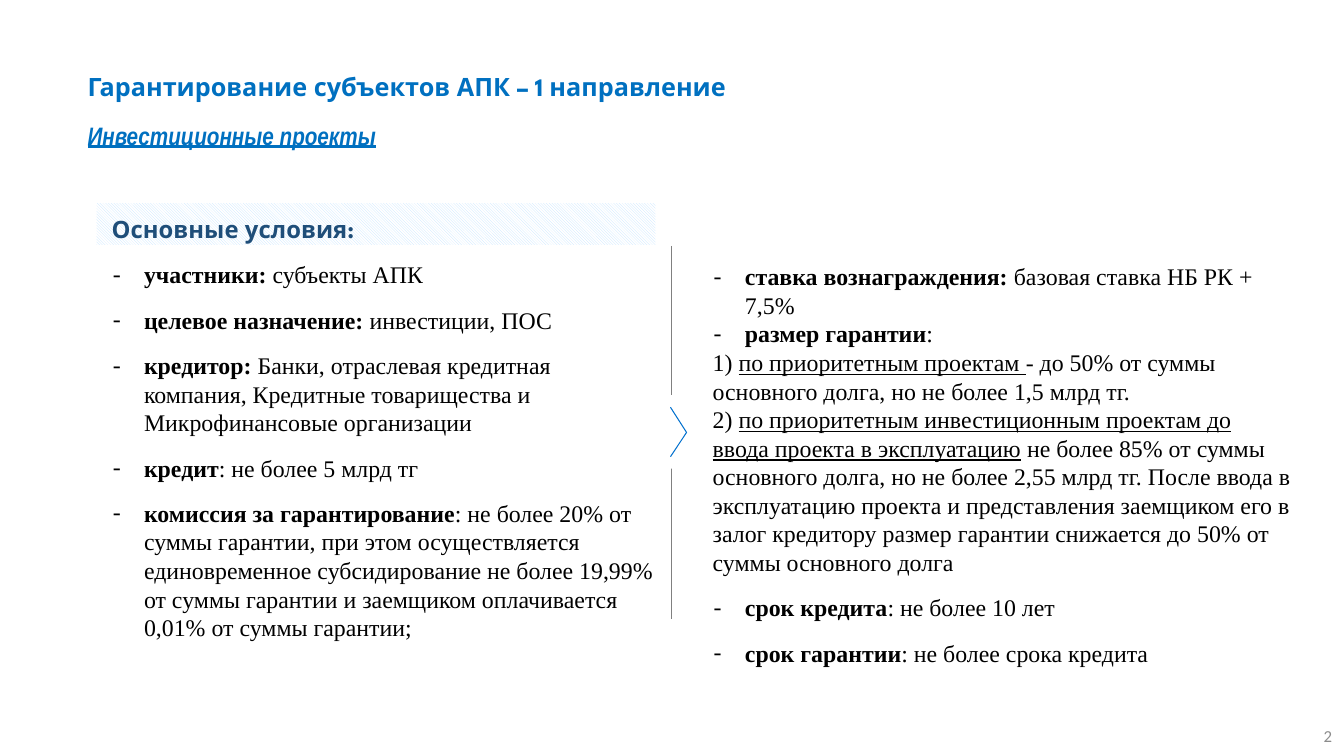
"""Builds the slide on guarantees for agricultural investment projects."""
from lxml.etree import SubElement
from pptx import Presentation
from pptx.dml.color import RGBColor
from pptx.enum.dml import MSO_PATTERN
from pptx.enum.shapes import MSO_CONNECTOR, MSO_SHAPE
from pptx.enum.text import MSO_ANCHOR, PP_ALIGN
from pptx.oxml.ns import qn
from pptx.util import Inches, Pt

BLUE = RGBColor(0x00, 0x70, 0xC0)
CHEVRON_BLUE = RGBColor(0x00, 0x70, 0xCE)
NAVY = RGBColor(0x1F, 0x4E, 0x79)
BLACK = RGBColor(0x00, 0x00, 0x00)
WHITE = RGBColor(0xFF, 0xFF, 0xFF)
PALE_BLUE = RGBColor(0xC2, 0xE3, 0xFF)
LINE_GRAY = RGBColor(0x80, 0x80, 0x80)
NUMBER_GRAY = RGBColor(0x8C, 0x8C, 0x8C)

TITLE = {"name": "League Spartan", "size": Pt(18), "bold": True, "color": BLUE}
SUBTITLE = {"name": "Arial Narrow", "size": Pt(18), "bold": True, "italic": True,
            "underline": True, "color": BLUE}
HEADING = {"name": "League Spartan", "size": Pt(17), "bold": True, "color": NAVY}
BODY = {"name": "Times New Roman", "size": Pt(17), "color": BLACK}
BOLD = {**BODY, "bold": True}
UNDERLINED = {**BODY, "underline": True}
NUMBER = {"name": "Calibri", "size": Pt(12), "color": NUMBER_GRAY}

PLAIN = {}
BULLET = {"bullet": "-"}
SPACED_BULLET = {"bullet": "-", "space_before": Pt(12)}

CONDITIONS = [
    (PLAIN, [("Основные условия:", HEADING)]),
    (SPACED_BULLET, [("участники: ", BOLD), ("субъекты АПК", BODY)]),
    (SPACED_BULLET, [("целевое назначение:", BOLD), (" инвестиции, ПОС", BODY)]),
    (SPACED_BULLET, [("кредитор: ", BOLD),
                     ("Банки, отраслевая кредитная компания, Кредитные товарищества "
                      "и Микрофинансовые организации", BODY)]),
    (SPACED_BULLET, [("кредит", BOLD), (": не более 5 млрд тг", BODY)]),
    (SPACED_BULLET, [("комиссия за гарантирование", BOLD),
                     (": не более 20% от суммы гарантии, при этом осуществляется "
                      "единовременное субсидирование не более 19,99% от суммы гарантии "
                      "и заемщиком оплачивается 0,01% от суммы гарантии;", BODY)]),
]
TERMS = [
    (BULLET, [("ставка вознаграждения: ", BOLD), ("базовая ставка НБ РК + 7,5%", BODY)]),
    (BULLET, [("размер гарантии", BOLD), (":", BODY)]),
    (PLAIN, [("1) ", BODY), ("по приоритетным проектам ", UNDERLINED),
             ("- до 50% от суммы основного долга, но не более 1,5 млрд тг.", BODY)]),
    (PLAIN, [("2) ", BODY),
             ("по приоритетным инвестиционным проектам до ввода проекта в эксплуатацию",
              UNDERLINED),
             (" не более 85% от суммы основного долга, но не более 2,55 млрд тг. После "
              "ввода в эксплуатацию проекта и представления заемщиком его в залог "
              "кредитору размер гарантии снижается до 50% от суммы основного долга", BODY)]),
    (SPACED_BULLET, [("срок кредита", BOLD), (": не более 10 лет", BODY)]),
    (SPACED_BULLET, [("срок гарантии", BOLD), (": не более срока кредита", BODY)]),
]
TEXT_BOXES = [
    ((0.77, 0.66, 8.69, 0.4), MSO_ANCHOR.TOP,
     [({"alignment": PP_ALIGN.JUSTIFY},
       [("Гарантирование субъектов АПК – 1 направление", TITLE)])]),
    ((0.77, 1.03, 8.43, 0.66), MSO_ANCHOR.MIDDLE,
     [({"line_spacing": 0.9}, [("Инвестиционные проекты", SUBTITLE)])]),
    ((1.01, 2.08, 5.59, 4.38), MSO_ANCHOR.TOP, CONDITIONS),
    ((6.97, 2.55, 5.95, 4.16), MSO_ANCHOR.TOP, TERMS),
    ((10.31, 7.1, 3, 0.4), MSO_ANCHOR.MIDDLE,
     [({"alignment": PP_ALIGN.RIGHT}, [("2", NUMBER)])]),
]
HEADING_BAND = (0.96, 2.02, 5.54, 0.41)
DIVIDER_X, DIVIDER_TOP, DIVIDER_BOTTOM = 6.66, 2.44, 6.14
DIVIDER_GAP = (6.61, 3.92, 0.16, 0.73)
CHEVRON = [(6.65, 4.04), (6.81, 4.29), (6.65, 4.53)]


def inches(values):
    return [Inches(value) for value in values]


def add_bullet(paragraph, character):
    properties = paragraph._p.get_or_add_pPr()
    properties.set("marL", str(Inches(0.32)))
    properties.set("indent", str(Inches(-0.31)))
    SubElement(properties, qn("a:buFont")).set("typeface", BODY["name"])
    SubElement(properties, qn("a:buChar")).set("char", character)


def format_run(run, style):
    for key, value in style.items():
        if key == "color":
            run.font.color.rgb = value
        else:
            setattr(run.font, key, value)


def add_text(slide, place, anchor, paragraphs):
    frame = slide.shapes.add_textbox(*inches(place)).text_frame
    frame.word_wrap = True
    frame.vertical_anchor = anchor
    for index, (layout, runs) in enumerate(paragraphs):
        paragraph = frame.add_paragraph() if index else frame.paragraphs[0]
        for key, value in layout.items():
            if key == "bullet":
                add_bullet(paragraph, value)
            else:
                setattr(paragraph, key, value)
        for text, style in runs:
            run = paragraph.add_run()
            run.text = text
            format_run(run, style)


def add_plain_shape(slide, kind, place):
    shape = slide.shapes.add_shape(kind, *inches(place))
    shape.shadow.inherit = False
    shape.line.fill.background()
    return shape


def add_heading_band(slide):
    band = add_plain_shape(slide, MSO_SHAPE.ROUNDED_RECTANGLE, HEADING_BAND)
    band.adjustments[0] = 0
    band.fill.patterned()
    band.fill.pattern = MSO_PATTERN.LIGHT_DOWNWARD_DIAGONAL
    band.fill.fore_color.rgb = PALE_BLUE
    band.fill.back_color.rgb = WHITE


def add_divider(slide):
    divider = slide.shapes.add_connector(
        MSO_CONNECTOR.STRAIGHT,
        *inches((DIVIDER_X, DIVIDER_TOP, DIVIDER_X, DIVIDER_BOTTOM)))
    SubElement(divider._element.spPr, qn("a:effectLst"))
    gap = add_plain_shape(slide, MSO_SHAPE.RECTANGLE, DIVIDER_GAP)
    gap.fill.solid()
    gap.fill.fore_color.rgb = WHITE
    start, *others = [inches(point) for point in CHEVRON]
    builder = slide.shapes.build_freeform(*start)
    builder.add_line_segments(others, close=False)
    chevron = builder.convert_to_shape()
    chevron.shadow.inherit = False
    chevron.fill.background()
    for shape, color, width in ((divider, LINE_GRAY, 1), (chevron, CHEVRON_BLUE, 0.75)):
        shape.line.color.rgb = color
        shape.line.width = Pt(width)


def main():
    presentation = Presentation()
    presentation.slide_width = Inches(13.33)
    presentation.slide_height = Inches(7.5)
    slide = presentation.slides.add_slide(presentation.slide_layouts[6])
    add_heading_band(slide)
    for place, anchor, paragraphs in TEXT_BOXES:
        add_text(slide, place, anchor, paragraphs)
    add_divider(slide)
    presentation.save("out.pptx")


if __name__ == "__main__":
    main()
